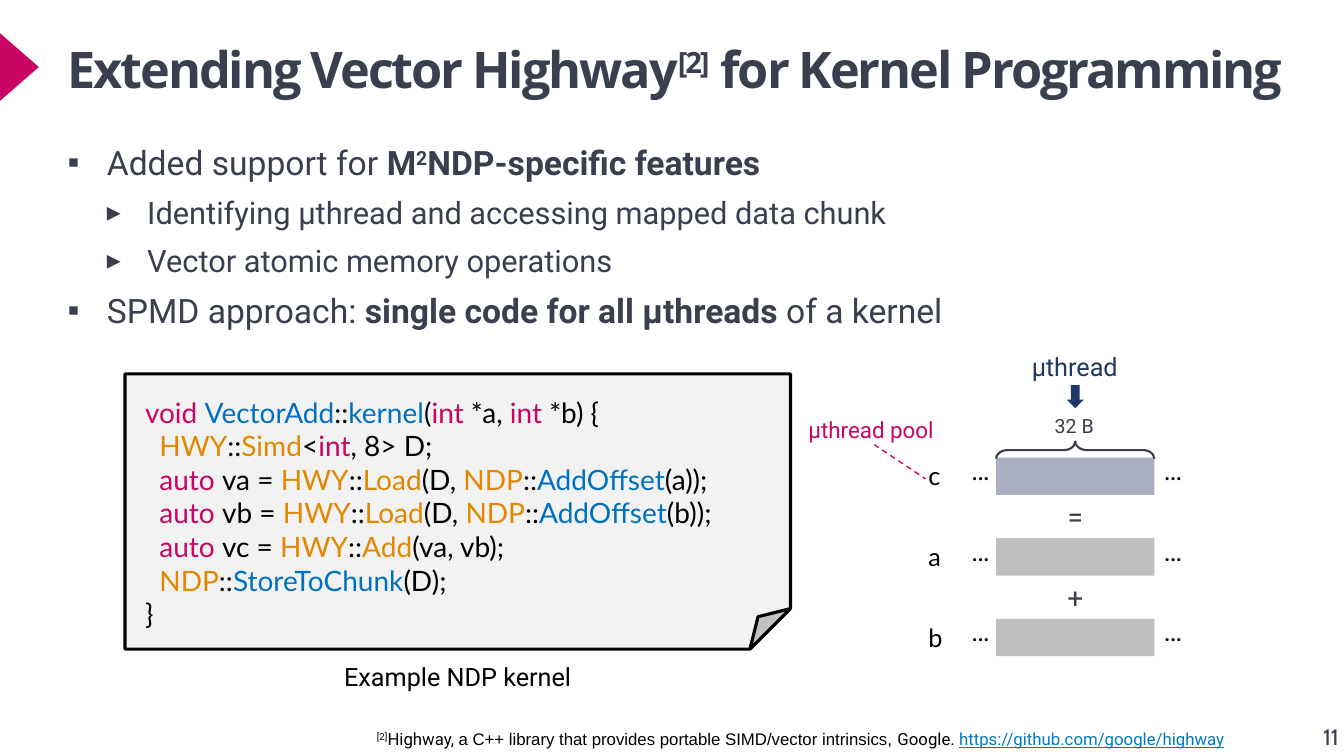
"""Builds the slide on extending Highway for NDP kernel programming."""
from dataclasses import dataclass

from lxml import etree
from pptx import Presentation
from pptx.dml.color import RGBColor
from pptx.enum.dml import MSO_LINE
from pptx.enum.shapes import MSO_CONNECTOR, MSO_SHAPE
from pptx.enum.text import MSO_ANCHOR, PP_ALIGN
from pptx.oxml.ns import qn
from pptx.util import Inches, Pt

LEFT, CENTER, RIGHT = PP_ALIGN.LEFT, PP_ALIGN.CENTER, PP_ALIGN.RIGHT
TOP, BOTTOM = MSO_ANCHOR.TOP, MSO_ANCHOR.BOTTOM
TRIANGLE, FOLDED = MSO_SHAPE.ISOSCELES_TRIANGLE, MSO_SHAPE.FOLDED_CORNER
RECT, BRACE, DOWN = MSO_SHAPE.RECTANGLE, MSO_SHAPE.RIGHT_BRACE, MSO_SHAPE.DOWN_ARROW
STRAIGHT, DASH = MSO_CONNECTOR.STRAIGHT, MSO_LINE.DASH


@dataclass(frozen=True)
class Theme:
    """Colours, fonts and type sizes."""
    ink: str = "3A3F50"
    operator: str = "3A3E45"
    black: str = "000000"
    magenta: str = "CA0464"
    blue: str = "0070C0"
    orange: str = "E28700"
    navy: str = "1F3864"
    link: str = "007BB9"
    paper: str = "F2F2F2"
    pooled: str = "A9AEC0"
    chunk: str = "BFBFBF"
    heading: str = "Open Sans"
    body: str = "Roboto"
    code: str = "Lato"
    number: str = "Cabin"
    note: str = "Arial"
    title_size: int = 36
    bullet_size: int = 24
    sub_size: int = 22
    code_size: int = 20
    label_size: int = 18
    pool_size: int = 16
    width_size: int = 14
    note_size: int = 12


T = Theme()
BOLD, SUPER = {"bold": True}, {"super": True}

TITLE = [("Extending Vector Highway", {}), ("[2]", SUPER), (" for Kernel Programming", {})]
BULLETS = [
    (0, [("Added support for ", {}), ("M", BOLD), ("2", {**BOLD, **SUPER}),
         ("NDP-specific features", BOLD)]),
    (1, [("Identifying μthread and accessing mapped data chunk", {})]),
    (1, [("Vector atomic memory operations", {})]),
    (0, [("SPMD approach: ", {}), ("single code for all μthreads ", BOLD), ("of a kernel", {})]),
]
BULLET_STYLES = [(T.bullet_size, 0.39, -0.39, "▪", 100), (T.sub_size, 0.79, -0.4, "▸", 90)]
CODE = [
    "void |VectorAdd|::|kernel|(|int| *a, |int| *b) {",
    "  |HWY|::|Simd|<|int|, 8> D;",
    "  |auto |va = |HWY|::|Load|(D, |NDP|::|AddOffset|(a));",
    "  |auto |vb = |HWY|::|Load|(D, |NDP|::|AddOffset|(b));",
    "  |auto |vc = |HWY|::|Add|(va, vb);",
    "  |NDP|::|StoreToChunk|(D);",
    "}",
]
SYNTAX = {
    **dict.fromkeys(["void", "int", "auto"], T.magenta),
    **dict.fromkeys(["VectorAdd", "kernel", "AddOffset", "StoreToChunk"], T.blue),
    **dict.fromkeys(["HWY", "NDP", "Simd", "Load", "Add"], T.orange),
}
FOOTNOTE = [
    ("[2]", SUPER), ("Highway, ", {}),
    ("a C++ library that provides portable SIMD/vector intrinsics, ", {"face": T.note}),
    ("Google. ", {}),
    ("https://github.com/google/highway", {"color": T.link, "underline": True}),
]
VECTORS = [("c", T.pooled, "="), ("a", T.chunk, "+"), ("b", T.chunk, None)]
VECTOR_LEFT, VECTOR_TOP, VECTOR_PITCH = 9.88, 4.54, 0.8
VECTOR_WIDTH, VECTOR_HEIGHT = 1.57, 0.37


def set_font(font, size=None, face=None, color=None, bold=None, underline=None):
    if size:
        font.size = Pt(size)
    if face:
        font.name = face
    if color:
        font.color.rgb = RGBColor.from_string(color)
    if bold is not None:
        font.bold = bold
    if underline is not None:
        font.underline = underline


def write(paragraph, runs, size, face, color, align=LEFT, bold=None):
    paragraph.alignment = align
    set_font(paragraph.font, size, face, color, bold)
    for words, style in runs:
        run = paragraph.add_run()
        run.text = words
        set_font(run.font, **{key: style[key] for key in style if key != "super"})
        if style.get("super"):
            run.font._element.set("baseline", "30000")


def set_frame(frame, wrap, inset=True, anchor=TOP):
    frame.word_wrap = wrap
    frame.vertical_anchor = anchor
    if not inset:
        frame.margin_left = frame.margin_right = frame.margin_top = frame.margin_bottom = 0


def add_frame(slide, box, wrap=False, inset=True, anchor=TOP):
    frame = slide.shapes.add_textbox(*map(Inches, box)).text_frame
    set_frame(frame, wrap, inset, anchor)
    return frame


def add_label(slide, box, words, size, face, color, align=CENTER):
    write(add_frame(slide, box).paragraphs[0], [(words, {})], size, face, color, align)


def add_figure(slide, preset, box, fill=None, line=None, width=1, adjust=None, rotation=0):
    figure = slide.shapes.add_shape(preset, *map(Inches, box))
    figure.shadow.inherit = False
    figure.rotation = rotation
    if adjust:
        guides = figure._element.spPr.find(qn("a:prstGeom")).get_or_add_avLst()
        guides.clear()
        for guide, value in adjust.items():
            etree.SubElement(guides, qn("a:gd"), name=guide, fmla=f"val {value}")
    if fill:
        figure.fill.solid()
        figure.fill.fore_color.rgb = RGBColor.from_string(fill)
    else:
        figure.fill.background()
    if line:
        figure.line.color.rgb = RGBColor.from_string(line)
        figure.line.width = Pt(width)
    else:
        figure.line.fill.background()
    return figure


def add_bullet(paragraph, level):
    size, margin, indent, mark, scale = BULLET_STYLES[level]
    paragraph.level = level
    props = paragraph._p.get_or_add_pPr()
    props.set("marL", str(Inches(margin)))
    props.set("indent", str(Inches(indent)))
    tint = etree.SubElement(props, qn("a:buClr"))
    etree.SubElement(tint, qn("a:srgbClr"), val=T.ink)
    etree.SubElement(props, qn("a:buSzPct"), val=str(scale * 1000))
    etree.SubElement(props, qn("a:buFont"), typeface=T.note)
    etree.SubElement(props, qn("a:buChar"), char=mark)
    return size


def add_heading(slide):
    title = slide.shapes.title
    title.left, title.top, title.width, title.height = map(Inches, (0.67, 0.38, 12.24, 0.86))
    set_frame(title.text_frame, True, inset=False)
    paragraph = title.text_frame.paragraphs[0]
    write(paragraph, TITLE, T.title_size, T.heading, T.ink, bold=True)
    for run in paragraph.runs:
        run.font._element.set("spc", "-150")


def add_bullets(slide):
    frame = add_frame(slide, (0.67, 1.41, 12.09, 2.1), wrap=True, inset=False)
    for index, (level, runs) in enumerate(BULLETS):
        paragraph = frame.add_paragraph() if index else frame.paragraphs[0]
        if index:
            paragraph.space_before = Pt(8)
        write(paragraph, runs, add_bullet(paragraph, level), T.body, T.ink)


def add_code(slide):
    sheet = add_figure(slide, FOLDED, (1.24, 3.71, 6.6, 2.73), T.paper, T.black, 2.25,
                       {"adj": 14700})
    sheet._element.spPr.find(qn("a:prstGeom")).set("prst", "foldedCorner")
    frame = add_frame(slide, (1.34, 3.87, 6.37, 2.46), wrap=True)
    for index, line in enumerate(CODE):
        paragraph = frame.add_paragraph() if index else frame.paragraphs[0]
        runs = [(token, {"color": SYNTAX.get(token.strip(), T.black)}) for token in line.split("|")]
        write(paragraph, runs, T.code_size, T.code, None)
    add_label(slide, (3.27, 6.51, 2.54, 0.4), "Example NDP kernel", T.label_size, T.body, T.black)


def add_vectors(slide):
    for index, (name, fill, operator) in enumerate(VECTORS):
        top = VECTOR_TOP + index * VECTOR_PITCH
        add_figure(slide, RECT, (VECTOR_LEFT, top, VECTOR_WIDTH, VECTOR_HEIGHT), fill)
        add_label(slide, (9.11, top - 0.02, 0.33, 0.4), name, T.label_size, T.code, T.black, LEFT)
        for left in (9.53, 11.44):
            add_label(slide, (left, top - 0.1, 0.39, 0.44), "…", T.code_size, T.body, T.black)
        if operator:
            add_label(slide, (VECTOR_LEFT, top + VECTOR_HEIGHT, VECTOR_WIDTH, 0.44),
                      operator, T.code_size, T.body, T.operator)


def add_thread(slide):
    add_label(slide, (10.13, 3.44, 1.06, 0.4), "μthread", T.label_size, T.body, T.navy)
    add_figure(slide, DOWN, (10.58, 3.82, 0.17, 0.23), T.navy)
    add_label(slide, (10.36, 4.06, 0.59, 0.34), "32 B", T.width_size, T.body, T.ink)
    add_figure(slide, BRACE, (10.58, 3.68, 0.17, VECTOR_WIDTH), None, T.ink, 1.5,
               {"adj1": 67000, "adj2": 50000}, 270)
    add_label(slide, (7.92, 4.08, 1.46, 0.37), "μthread pool", T.pool_size, T.body, T.magenta, LEFT)
    leader = slide.shapes.add_connector(STRAIGHT, *map(Inches, (8.67, 4.41, 9.18, 4.75)))
    leader.line.color.rgb = RGBColor.from_string(T.magenta)
    leader.line.width = Pt(1)
    leader.line.dash_style = DASH
    etree.SubElement(leader._element.spPr, qn("a:effectLst"))


def main():
    deck = Presentation()
    deck.slide_width, deck.slide_height = Inches(13.33), Inches(7.5)
    slide = deck.slides.add_slide(deck.slide_layouts[5])
    add_figure(slide, TRIANGLE, (-0.15, 0.47, 0.68, 0.39), T.magenta, rotation=90)
    add_heading(slide)
    add_bullets(slide)
    add_code(slide)
    add_vectors(slide)
    add_thread(slide)
    footnote = add_frame(slide, (3.64, 7.18, 8.97, 0.3), wrap=True)
    write(footnote.paragraphs[0], FOOTNOTE, T.note_size, T.body, T.black)
    page = add_frame(slide, (12.61, 6.76, 0.67, 0.68), True, False, BOTTOM)
    write(page.paragraphs[0], [("11", {})], T.pool_size, T.number, T.ink, RIGHT)
    deck.save("out.pptx")


if __name__ == "__main__":
    main()
